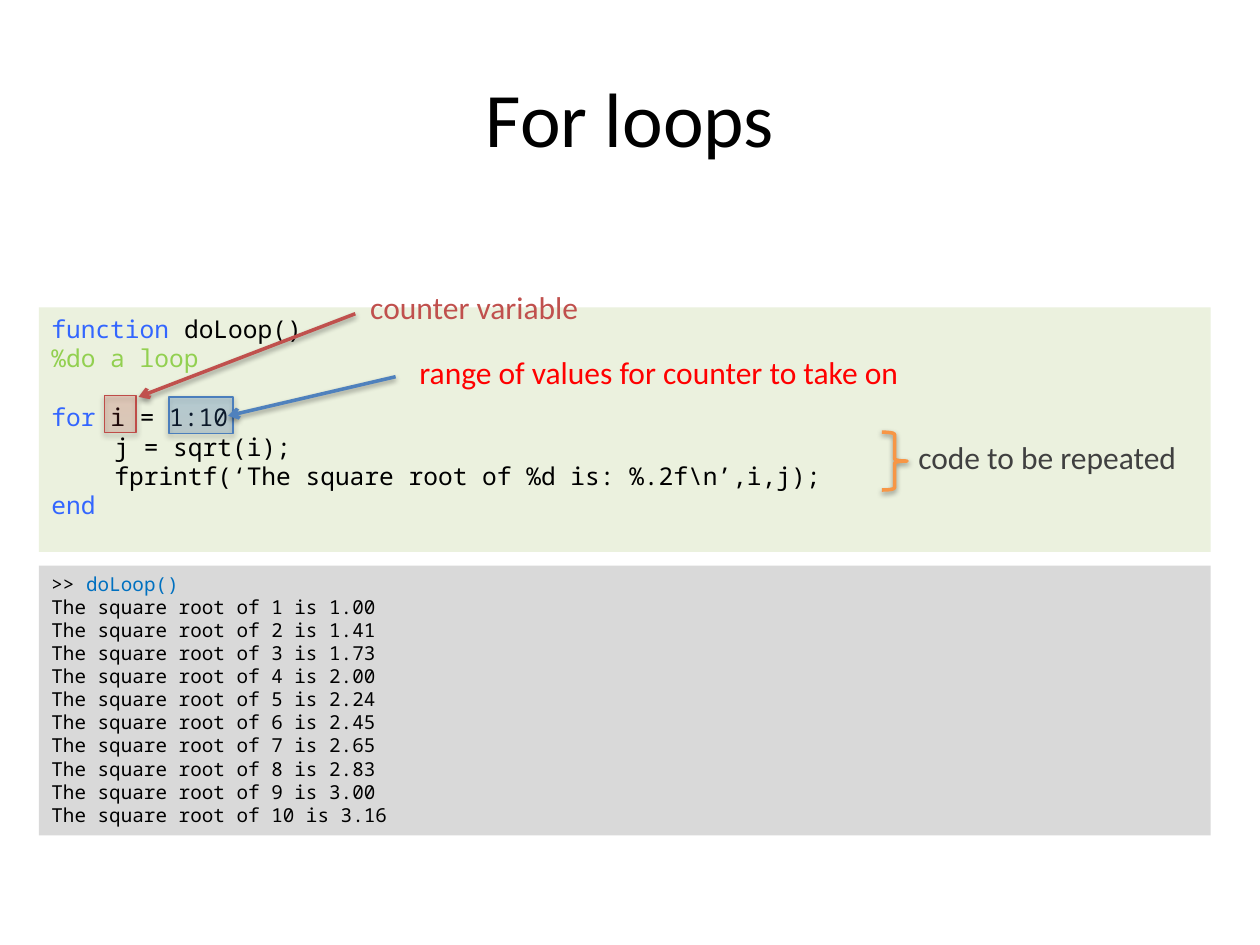
import lxml.etree
import pptx
import pptx.dml.color
import pptx.enum.dml
import pptx.enum.shapes
import pptx.enum.text
import pptx.oxml.ns
import pptx.util

RGBColor = pptx.dml.color.RGBColor
Inches = pptx.util.Inches
Pt = pptx.util.Pt
qn = pptx.oxml.ns.qn
SHAPE = pptx.enum.shapes.MSO_SHAPE

BLACK = RGBColor(0x00, 0x00, 0x00)
KEYWORD_BLUE = RGBColor(0x33, 0x66, 0xFF)
COMMENT_GREEN = RGBColor(0x92, 0xD0, 0x50)
COMMAND_BLUE = RGBColor(0x00, 0x70, 0xC0)
CODE_FILL = RGBColor(0xEB, 0xF1, 0xDE)
OUTPUT_FILL = RGBColor(0xD9, 0xD9, 0xD9)
COUNTER_RED = RGBColor(0xC0, 0x50, 0x4D)
COUNTER_EDGE = RGBColor(0xBF, 0x4C, 0x48)
COUNTER_GRADIENT = (RGBColor(0xBD, 0x42, 0x3F), RGBColor(0xDD, 0x35, 0x30))
RANGE_RED = RGBColor(0xFF, 0x00, 0x00)
RANGE_BLUE = RGBColor(0x4F, 0x81, 0xBD)
RANGE_EDGE = RGBColor(0x4B, 0x7E, 0xBC)
RANGE_GRADIENT = (RGBColor(0x41, 0x74, 0xB9), RGBColor(0x33, 0x7F, 0xD9))
BRACE_ORANGE = RGBColor(0xF7, 0x96, 0x46)
BODY_GRAY = RGBColor(0x40, 0x40, 0x40)

TEXT_FONT = "Calibri"
CODE_FONT = "Noto Sans Mono"

CODE_LINES = [
    [("function ", KEYWORD_BLUE), ("doLoop()", BLACK)],
    [("%do a loop", COMMENT_GREEN)],
    [("for ", KEYWORD_BLUE), ("i = 1:10", BLACK)],
    [("\tj = sqrt(i);", BLACK)],
    [(r"	fprintf(‘The square root of %d is: %.2f\n’,i,j);", BLACK)],
    [("end", KEYWORD_BLUE)],
]
LOOP_LINE = 2


def add_run(para, text, font, size, color):
    run = para.add_run()
    run.text = text
    run.font.name = font
    run.font.size = Pt(size)
    run.font.color.rgb = color


def add_title(page, text):
    title = page.shapes.title
    title.left, title.top = Inches(0.5), Inches(0.3)
    title.width, title.height = Inches(9), Inches(1.25)
    title.text_frame.vertical_anchor = pptx.enum.text.MSO_ANCHOR.MIDDLE
    para = title.text_frame.paragraphs[0]
    para.alignment = pptx.enum.text.PP_ALIGN.CENTER
    add_run(para, text, TEXT_FONT, 44, BLACK)


def add_panel(page, top, height, fill, lines, size):
    """Add a full-width panel of code and return its paragraphs."""
    panel = page.shapes.add_shape(
        SHAPE.RECTANGLE, Inches(0.31), Inches(top), Inches(9.3), Inches(height))
    panel.shadow.inherit = False
    panel.fill.solid()
    panel.fill.fore_color.rgb = fill
    panel.line.fill.background()
    frame = panel.text_frame
    frame.word_wrap = True
    frame.vertical_anchor = pptx.enum.text.MSO_ANCHOR.TOP
    for index, runs in enumerate(lines):
        para = frame.add_paragraph() if index else frame.paragraphs[0]
        para.alignment = pptx.enum.text.PP_ALIGN.LEFT
        for text, color in runs:
            add_run(para, text, CODE_FONT, size, color)
    return frame.paragraphs


def add_label(page, left, top, width, text, color):
    box = page.shapes.add_textbox(
        Inches(left), Inches(top), Inches(width), Inches(0.4))
    box.text_frame.word_wrap = True
    add_run(box.text_frame.paragraphs[0], text, TEXT_FONT, 18, color)


def set_line(shape, color, width):
    shape.line.color.rgb = color
    shape.line.width = Pt(width)


def add_shadow(shape, opacity, distance):
    """Add a soft downward shadow; call it once the line is set."""
    effects = lxml.etree.SubElement(shape._element.spPr, qn("a:effectLst"))
    shadow = lxml.etree.SubElement(
        effects, qn("a:outerShdw"), blurRad=str(Pt(3.1)),
        dist=str(Pt(distance)), dir="5400000", rotWithShape="0")
    color = lxml.etree.SubElement(shadow, qn("a:srgbClr"), val=str(BLACK))
    lxml.etree.SubElement(color, qn("a:alpha"), val=str(opacity * 1000))


def add_highlight(page, left, top, width, gradient, opacity, edge):
    box = page.shapes.add_shape(
        SHAPE.RECTANGLE, Inches(left), Inches(top), Inches(width), Inches(0.29))
    box.fill.gradient()
    box.fill.gradient_angle = 90
    for stop, color in zip(box.fill.gradient_stops, gradient):
        stop.color.rgb = color
    for color in box._element.spPr.iter(qn("a:srgbClr")):
        lxml.etree.SubElement(color, qn("a:alpha"), val=str(opacity * 1000))
    set_line(box, edge, 0.75)
    add_shadow(box, 35, 1.8)


def add_arrow(page, start, end, color):
    arrow = page.shapes.add_connector(
        pptx.enum.shapes.MSO_CONNECTOR.STRAIGHT,
        *(Inches(length) for length in start + end))
    set_line(arrow, color, 2)
    lxml.etree.SubElement(arrow.line._ln, qn("a:tailEnd"), type="arrow")
    add_shadow(arrow, 38, 1.6)


def add_brace(page):
    brace = page.shapes.add_shape(
        SHAPE.RIGHT_BRACE, Inches(7), Inches(3.43), Inches(0.2), Inches(0.46))
    brace.fill.background()
    set_line(brace, BRACE_ORANGE, 2)
    add_shadow(brace, 38, 1.6)


def main():
    deck = pptx.Presentation()
    deck.slide_width, deck.slide_height = Inches(10), Inches(7.5)
    page = deck.slides.add_slide(deck.slide_layouts[5])
    add_title(page, "For loops")

    # Code panel, with a one-line gap above the loop
    code = add_panel(page, 2.44, 1.94, CODE_FILL, CODE_LINES, 14)
    code[LOOP_LINE].space_before = Pt(17)

    # Output panel
    output = [[(">> ", BLACK), ("doLoop()", COMMAND_BLUE)]]
    output += [[(f"The square root of {n} is {n ** 0.5:.2f}", BLACK)]
               for n in range(1, 11)]
    add_panel(page, 4.49, 2.14, OUTPUT_FILL, output, 11)

    # Highlighted parts of the loop and their labels
    add_highlight(page, 0.83, 3.14, 0.25, COUNTER_GRADIENT, 16, COUNTER_EDGE)
    add_label(page, 2.84, 2.24, 2.46, "counter variable", COUNTER_RED)
    add_highlight(page, 1.34, 3.15, 0.51, RANGE_GRADIENT, 21, RANGE_EDGE)
    add_label(page, 3.23, 2.75, 4.92,
              "range of values for counter to take on", RANGE_RED)
    add_arrow(page, (2.82, 2.49), (1.1, 3.15), COUNTER_RED)
    add_arrow(page, (3.14, 2.99), (1.81, 3.3), RANGE_BLUE)

    # Loop body
    add_brace(page)
    add_label(page, 7.19, 3.43, 2.46, "code to be repeated", BODY_GRAY)

    deck.save("out.pptx")


if __name__ == "__main__":
    main()
